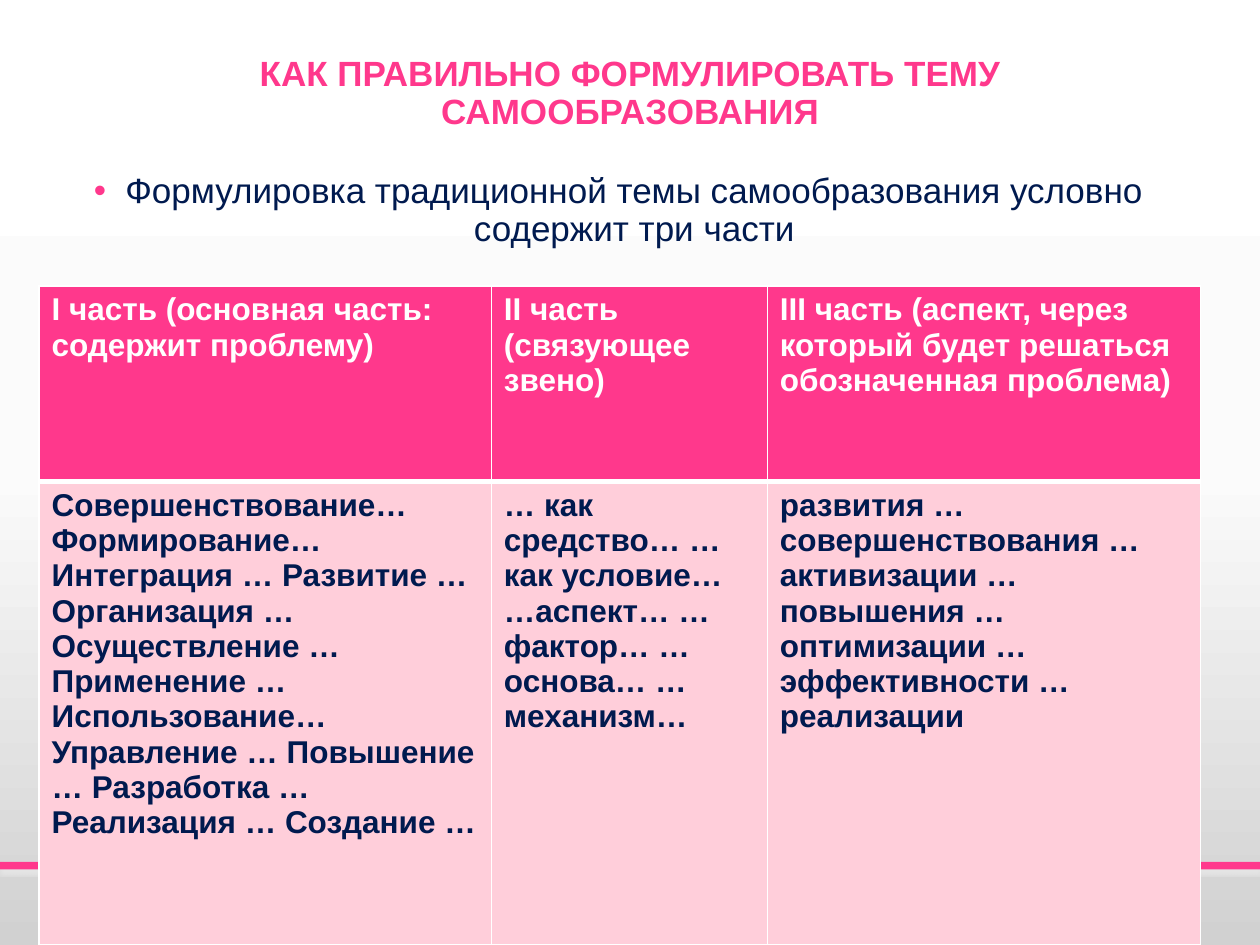
from copy import deepcopy
from dataclasses import dataclass

from lxml import etree
from pptx import Presentation
from pptx.dml.color import RGBColor
from pptx.enum.shapes import MSO_SHAPE
from pptx.enum.text import MSO_ANCHOR, PP_ALIGN
from pptx.oxml import parse_xml
from pptx.oxml.ns import nsdecls, qn
from pptx.util import Inches, Pt

RECTANGLE = MSO_SHAPE.RECTANGLE
CENTER = PP_ALIGN.CENTER
BOTTOM = MSO_ANCHOR.BOTTOM
PINK, PALE_PINK, NAVY, WHITE = "FF388C", "FFCEDA", "001A4F", "FFFFFF"
FONT = "Arial"


@dataclass
class TopicPart:
    heading: str
    examples: str
    width: float


@dataclass
class RowStyle:
    height: float
    fill: str
    text: str
    top_border: float
    bottom_border: float


PARTS = [
    TopicPart(
        "I часть (основная часть: содержит проблему)",
        "Совершенствование… Формирование… Интеграция … Развитие … Организация … "
        "Осуществление … Применение … Использование… Управление … Повышение … "
        "Разработка … Реализация … Создание …",
        3.59,
    ),
    TopicPart(
        "II часть (связующее звено)",
        "… как средство… … как условие… …аспект… …фактор… …основа… …механизм…",
        2.19,
    ),
    TopicPart(
        "III часть (аспект, через который будет решаться обозначенная проблема)",
        "развития …совершенствования …активизации …повышения …оптимизации "
        "…эффективности …реализации",
        3.44,
    ),
]
ROWS = [RowStyle(1.55, PINK, WHITE, 1, 3), RowStyle(3.68, PALE_PINK, NAVY, 3, 1)]


def rgb(value: str) -> RGBColor:
    return RGBColor.from_string(value)


def style_text(paragraph, size: float, color: str, bold: bool = False) -> None:
    for run in paragraph.runs:
        run.font.name = FONT
        run.font.size = Pt(size)
        run.font.bold = bold
        run.font.color.rgb = rgb(color)


def paint_background(slide) -> None:
    fill = slide.background.fill
    fill.gradient()
    fill.gradient_angle = 270
    stops = slide.background._cSld.find(".//" + qn("a:gsLst"))
    stops.insert(1, deepcopy(stops[0]))
    shades = [(0, WHITE), (0.5, "FBFBFB"), (1, "D1D1D1")]
    for stop, (position, color) in zip(fill.gradient_stops, shades):
        stop.position = position
        stop.color.rgb = rgb(color)


def add_stripe(slide) -> None:
    stripe = slide.shapes.add_shape(
        RECTANGLE, Inches(0), Inches(6.84), Inches(10), Inches(0.06)
    )
    stripe.fill.solid()
    stripe.fill.fore_color.rgb = rgb(PINK)
    stripe.line.fill.background()
    stripe.shadow.inherit = False
    effects = stripe._element.spPr.find(qn("a:effectLst"))
    effects.append(parse_xml(
        f'<a:outerShdw {nsdecls("a")} blurRad="{Pt(2)}" dist="{Pt(2)}" dir="5400000">'
        f'<a:srgbClr val="{WHITE}"><a:alpha val="40000"/></a:srgbClr></a:outerShdw>'
    ))


def write_title(slide) -> None:
    title = slide.shapes.title
    title.left, title.top = Inches(1.06), Inches(0.42)
    title.width, title.height = Inches(7.88), Inches(0.68)
    title.text_frame.text = "КАК ПРАВИЛЬНО ФОРМУЛИРОВАТЬ ТЕМУ САМООБРАЗОВАНИЯ"
    title.text_frame.vertical_anchor = BOTTOM
    paragraph = title.text_frame.paragraphs[0]
    paragraph.alignment = CENTER
    paragraph.line_spacing = 0.9
    style_text(paragraph, 20, PINK, True)


def add_intro(slide) -> None:
    intro = slide.shapes.add_textbox(Inches(0), Inches(1.33), Inches(9.77), Inches(0.8))
    frame = intro.text_frame
    frame.word_wrap = True
    frame.text = (
        "Формулировка традиционной темы самообразования условно содержит три части"
    )
    paragraph = frame.paragraphs[0]
    paragraph.alignment = CENTER
    paragraph.line_spacing = 0.9
    properties = paragraph._p.get_or_add_pPr()
    properties.set("marL", str(Inches(0.3)))
    properties.set("indent", str(Inches(-0.25)))
    bullet_color = etree.SubElement(properties, qn("a:buClr"))
    etree.SubElement(bullet_color, qn("a:srgbClr"), val=PINK)
    etree.SubElement(properties, qn("a:buFont"), typeface=FONT)
    etree.SubElement(properties, qn("a:buChar"), char="•")
    style_text(paragraph, 20, NAVY)


def set_borders(cell, top: float, bottom: float) -> None:
    properties = cell._tc.get_or_add_tcPr()
    widths = {"lnL": 1, "lnR": 1, "lnT": top, "lnB": bottom}
    for index, (side, width) in enumerate(widths.items()):
        properties.insert(index, parse_xml(
            f'<a:{side} {nsdecls("a")} w="{Pt(width)}"><a:solidFill>'
            f'<a:srgbClr val="{WHITE}"/></a:solidFill></a:{side}>'
        ))


def add_parts_table(slide) -> None:
    table = slide.shapes.add_table(
        len(ROWS), len(PARTS), Inches(0.31), Inches(2.27), Inches(9.22), Inches(5.23)
    ).table
    for column, part in zip(table.columns, PARTS):
        column.width = Inches(part.width)
    for row_index, style in enumerate(ROWS):
        table.rows[row_index].height = Inches(style.height)
        for column_index, part in enumerate(PARTS):
            cell = table.cell(row_index, column_index)
            cell.text_frame.text = (part.heading, part.examples)[row_index]
            style_text(cell.text_frame.paragraphs[0], 18, style.text, True)
            cell.fill.solid()
            cell.fill.fore_color.rgb = rgb(style.fill)
            set_borders(cell, style.top_border, style.bottom_border)


def main() -> None:
    """Build the slide on wording a self-education topic."""
    presentation = Presentation()
    presentation.slide_width = Inches(10)
    presentation.slide_height = Inches(7.5)
    slide = presentation.slides.add_slide(presentation.slide_layouts[5])
    paint_background(slide)
    add_stripe(slide)
    write_title(slide)
    add_intro(slide)
    add_parts_table(slide)
    presentation.save("out.pptx")


if __name__ == "__main__":
    main()
